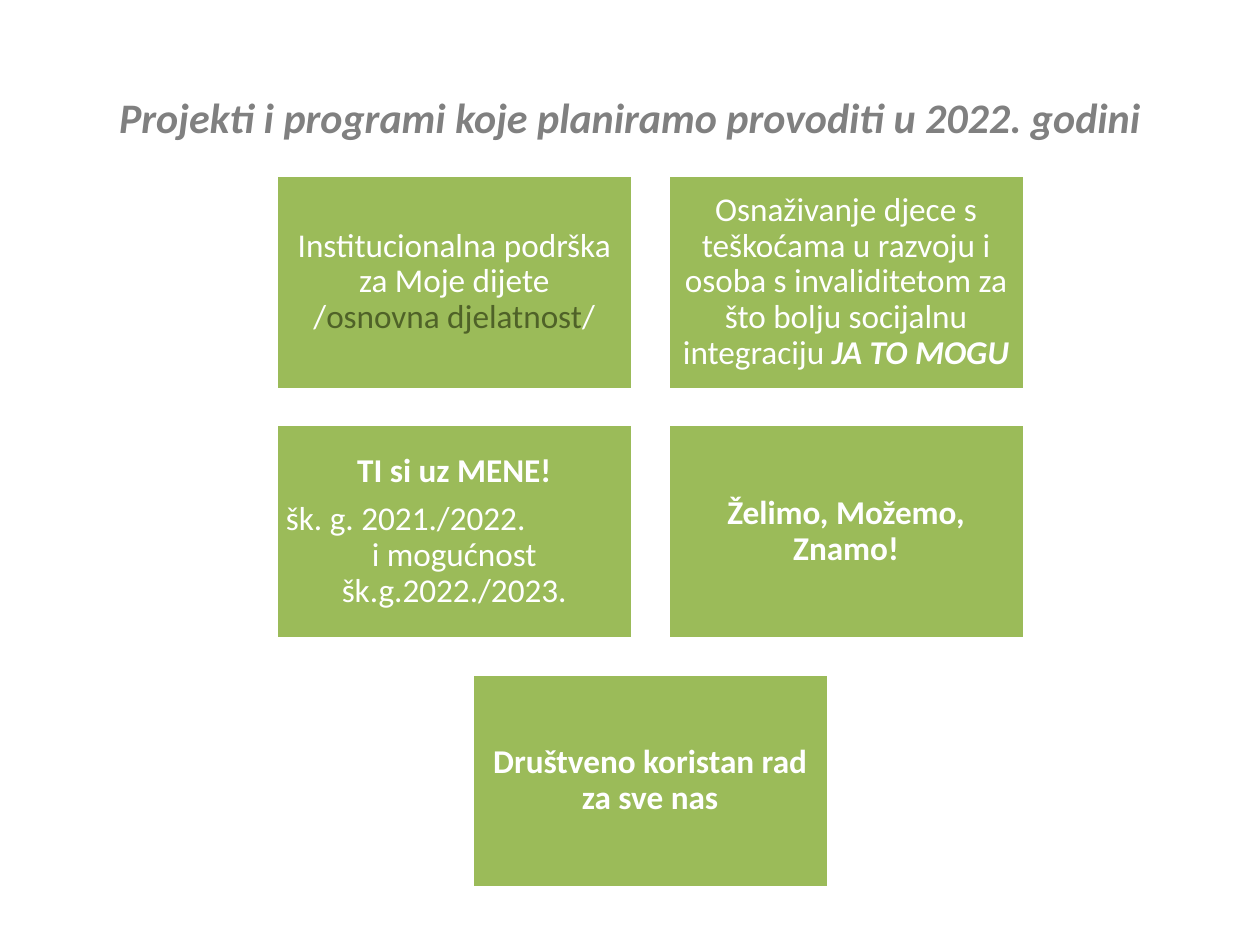
from pptx import Presentation
from pptx.dml.color import RGBColor
from pptx.enum.shapes import MSO_SHAPE
from pptx.enum.text import MSO_ANCHOR, PP_ALIGN
from pptx.util import Inches, Pt

RECTANGLE = MSO_SHAPE.RECTANGLE
MIDDLE = MSO_ANCHOR.MIDDLE
CENTER, LEFT = PP_ALIGN.CENTER, PP_ALIGN.LEFT

COLORS = {"title": "808080", "box": "9BBB59", "white": "FFFFFF", "dark": "4F6228"}
PLAIN = {"size": Pt(19), "bold": False, "italic": False}
BOLD = {**PLAIN, "bold": True}
BOLD_ITALIC = {**BOLD, "italic": True}
TITLE = {"size": Pt(24), "bold": True, "italic": True}
SPACED = {"alignment": CENTER, "line_spacing": 0.9, "space_after": Pt(6.65)}
TIGHT_LEFT = {**SPACED, "alignment": LEFT, "space_after": Pt(0)}

BOX_WIDTH, BOX_HEIGHT = 2.83, 1.7
COLUMN_STEP, ROW_STEP = 3.11, 1.98
GRID_CENTER, GRID_TOP = 5.16, 1.39

PROJECT_ROWS = [
    [
        [(SPACED, [("Institucionalna podrška za Moje dijete\v/", PLAIN, "white"),
                   ("osnovna djelatnost", PLAIN, "dark"),
                   ("/", PLAIN, "white")])],
        [(SPACED, [("Osnaživanje djece s teškoćama u razvoju i osoba s invaliditetom "
                    "za što bolju socijalnu integraciju ", PLAIN, "white"),
                   ("JA TO MOGU", BOLD_ITALIC, "white")])],
    ],
    [
        [(SPACED, [("TI si uz MENE!", BOLD, "white")]),
         (TIGHT_LEFT, [("šk. g. 2021./2022.", PLAIN, "white")]),
         (SPACED, [("i mogućnost\všk.g.2022./2023.", PLAIN, "white")])],
        [(SPACED, [("Želimo, Možemo, Znamo!", BOLD, "white")])],
    ],
    [
        [(SPACED, [("Društveno koristan rad za sve nas", BOLD, "white")])],
    ],
]


def apply_format(target, values):
    """Set every attribute named in values on target."""
    for name, value in values.items():
        setattr(target, name, value)


class ProjectSlide:
    """Hold the slide and its shared style."""

    def __init__(self, slide, font_name="Calibri", inset=0.08):
        self.slide = slide
        self.font_name = font_name
        self.inset = Inches(inset)

    def color(self, name):
        """Return the named palette colour."""
        return RGBColor.from_string(COLORS[name])

    def fill_text(self, frame, paragraphs):
        """Fill a text frame with formatted paragraphs."""
        sides = ("left", "right", "top", "bottom")
        apply_format(frame, {"word_wrap": True, "vertical_anchor": MIDDLE,
                             **{f"margin_{side}": self.inset for side in sides}})
        for index, (layout, runs) in enumerate(paragraphs):
            paragraph = frame.add_paragraph() if index else frame.paragraphs[0]
            apply_format(paragraph, layout)
            for wording, style, color_name in runs:
                for line_number, line in enumerate(wording.split("\v")):
                    if line_number:
                        paragraph.add_line_break()
                    run = paragraph.add_run()
                    run.text = line
                    apply_format(run.font, {"name": self.font_name, **style})
                    run.font.color.rgb = self.color(color_name)

    def title(self, wording):
        """Add the heading."""
        heading = self.slide.shapes.add_textbox(
            Inches(0.5), Inches(0.3), Inches(9), Inches(1.25))
        self.fill_text(heading.text_frame,
                       [({"alignment": CENTER}, [(wording, TITLE, "title")])])

    def box(self, left, top, paragraphs):
        """Add one project box."""
        project = self.slide.shapes.add_shape(
            RECTANGLE, Inches(left), Inches(top), Inches(BOX_WIDTH), Inches(BOX_HEIGHT))
        project.shadow.inherit = False
        project.fill.solid()
        project.fill.fore_color.rgb = self.color("box")
        project.line.color.rgb = self.color("white")
        project.line.width = Pt(2)
        self.fill_text(project.text_frame, paragraphs)

    def grid(self, rows):
        """Lay out the project boxes in centred rows."""
        for row_number, projects in enumerate(rows):
            row_width = BOX_WIDTH + COLUMN_STEP * (len(projects) - 1)
            row_left = GRID_CENTER - row_width / 2
            for column, paragraphs in enumerate(projects):
                self.box(row_left + column * COLUMN_STEP,
                         GRID_TOP + row_number * ROW_STEP, paragraphs)


def main():
    """Build and save the presentation."""
    deck = Presentation()
    deck.slide_width, deck.slide_height = Inches(10), Inches(7.5)
    plan = ProjectSlide(deck.slides.add_slide(deck.slide_layouts[6]))
    plan.title("Projekti i programi koje planiramo provoditi u 2022. godini")
    plan.grid(PROJECT_ROWS)
    deck.save("out.pptx")


if __name__ == "__main__":
    main()
